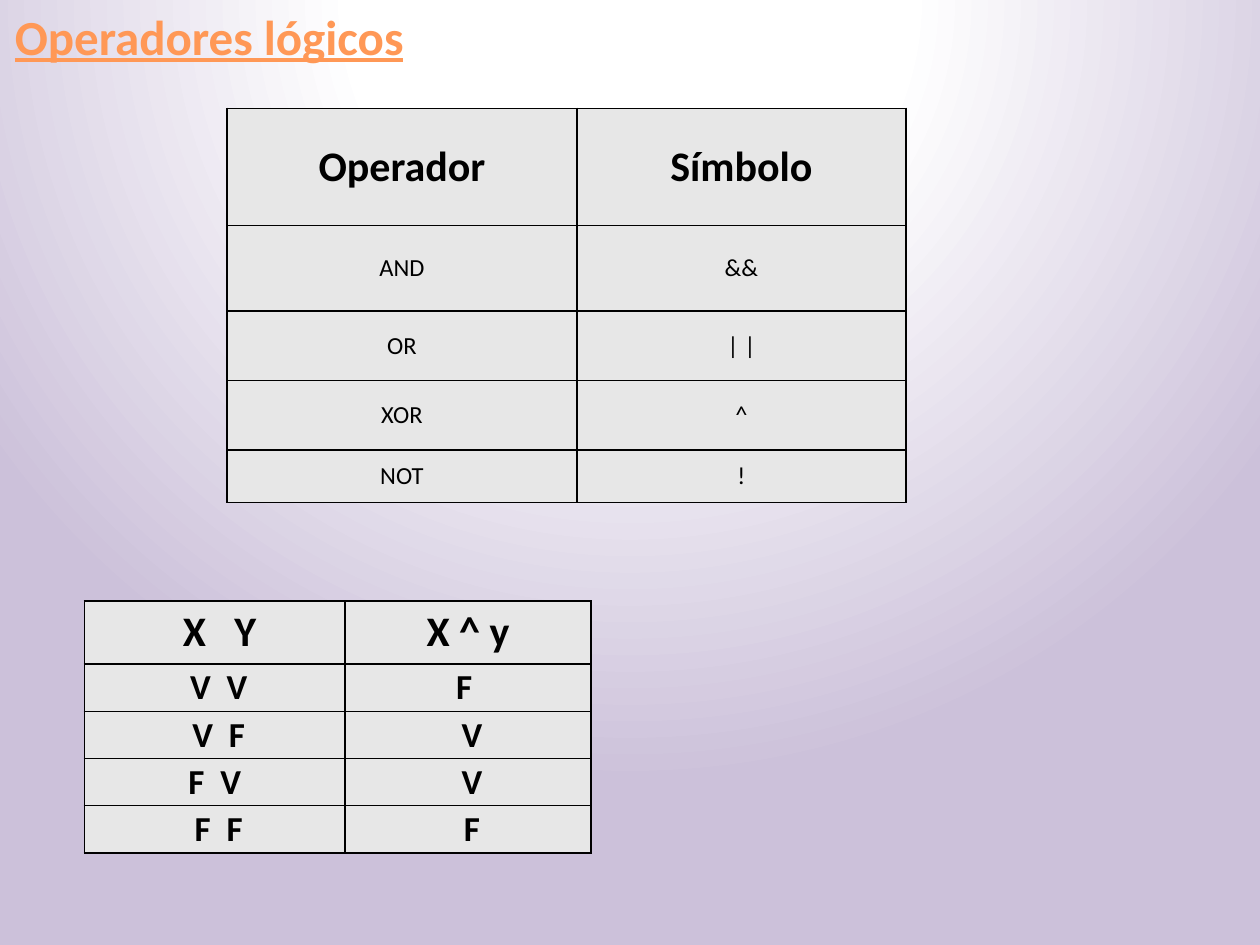
from lxml import etree
from pptx import Presentation
from pptx import util as u
from pptx.dml.color import RGBColor
from pptx.enum import text
from pptx.oxml import parse_xml
from pptx.oxml.ns import nsdecls, qn

TITLE = "Operadores lógicos"
TABLES = [
    {
        "left": 1.8, "top": 0.86,
        "columns": [2.78, 2.61],
        "heights": [0.93, 0.68, 0.55, 0.55, 0.42],
        "body": {"size": 14, "bold": False},
        "rows": [
            ("Operador", "Símbolo"),
            ("AND", "&&"),
            ("OR", "| |"),
            ("XOR", "^"),
            ("NOT", "!"),
        ],
    },
    {
        "left": 0.67, "top": 4.77,
        "columns": [2.07, 1.95],
        "heights": [0.5] + [0.375] * 4,
        "body": {"size": 20, "bold": True},
        "rows": [
            (" X   Y", "X ^ y"),
            (" V  V", "F "),
            (" V  F", " V"),
            (" F  V ", " V"),
            (" F  F", " F"),
        ],
    },
]
HEADER = {"size": 24, "bold": True}
BACKGROUND_STOPS = [(0, "FFFFFF"), (35, "FFFFFF"), (100, "CCC1DA")]
CELL_FILL, BLACK, ORANGE = "E7E7E7", "000000", "FF9856"


def color(value):
    return RGBColor.from_string(value)


def write(frame, words, size, bold=False, underline=False, ink=BLACK):
    para = frame.paragraphs[0]
    para.alignment = text.PP_ALIGN.CENTER
    span = para.add_run()
    span.text = words
    font = span.font
    font.name, font.size = "Calibri", u.Pt(size)
    font.bold, font.underline = bold, underline
    font.color.rgb = color(ink)


def paint_background(slide):
    """Circular gradient centred above the top edge of the slide."""
    slide.background.fill.gradient()
    old = slide.element.find(".//" + qn("a:gradFill"))
    stops = "".join(
        f'<a:gs pos="{place * 1000}"><a:srgbClr val="{value}"/></a:gs>'
        for place, value in BACKGROUND_STOPS
    )
    old.getparent().replace(old, parse_xml(
        f'<a:gradFill {nsdecls("a")} rotWithShape="1"><a:gsLst>{stops}</a:gsLst>'
        '<a:path path="circle">'
        '<a:fillToRect l="50000" t="-80000" r="50000" b="180000"/>'
        '</a:path></a:gradFill>'
    ))


def add_borders(cell):
    properties = cell._tc.get_or_add_tcPr()
    for index, side in enumerate(("lnL", "lnR", "lnT", "lnB")):
        line = etree.Element(qn(f"a:{side}"), w=str(u.Pt(1)))
        fill = etree.SubElement(line, qn("a:solidFill"))
        etree.SubElement(fill, qn("a:srgbClr"), val=BLACK)
        properties.insert(index, line)


def add_grid(slide, content):
    rows, columns, heights = (content[key] for key in ("rows", "columns", "heights"))
    frame = slide.shapes.add_table(
        len(rows), len(columns),
        u.Inches(content["left"]), u.Inches(content["top"]),
        u.Inches(sum(columns)), u.Inches(sum(heights)),
    )
    table = frame.table
    for column, width in zip(table.columns, columns):
        column.width = u.Inches(width)
    for row_index, (row, height, words) in enumerate(zip(table.rows, heights, rows)):
        row.height = u.Inches(height)
        style = content["body"] if row_index else HEADER
        for cell, label in zip(row.cells, words):
            cell.margin_left = cell.margin_right = u.Inches(0.04)
            cell.margin_top = cell.margin_bottom = u.Inches(0.02)
            cell.vertical_anchor = text.MSO_ANCHOR.MIDDLE
            cell.fill.solid()
            cell.fill.fore_color.rgb = color(CELL_FILL)
            add_borders(cell)
            write(cell.text_frame, label, **style)


def add_title(slide):
    box = slide.shapes.add_textbox(0, 0, u.Inches(3.32), u.Inches(0.57))
    box.text_frame.word_wrap = False
    box.text_frame.auto_size = text.MSO_AUTO_SIZE.SHAPE_TO_FIT_TEXT
    write(box.text_frame, TITLE, size=28, bold=True, underline=True, ink=ORANGE)


def main():
    deck = Presentation()
    deck.slide_width, deck.slide_height = u.Inches(10), u.Inches(7.5)
    slide = deck.slides.add_slide(deck.slide_layouts[6])
    paint_background(slide)
    operators, truth = TABLES
    add_grid(slide, operators)
    add_title(slide)
    add_grid(slide, truth)
    deck.save("out.pptx")


if __name__ == "__main__":
    main()
